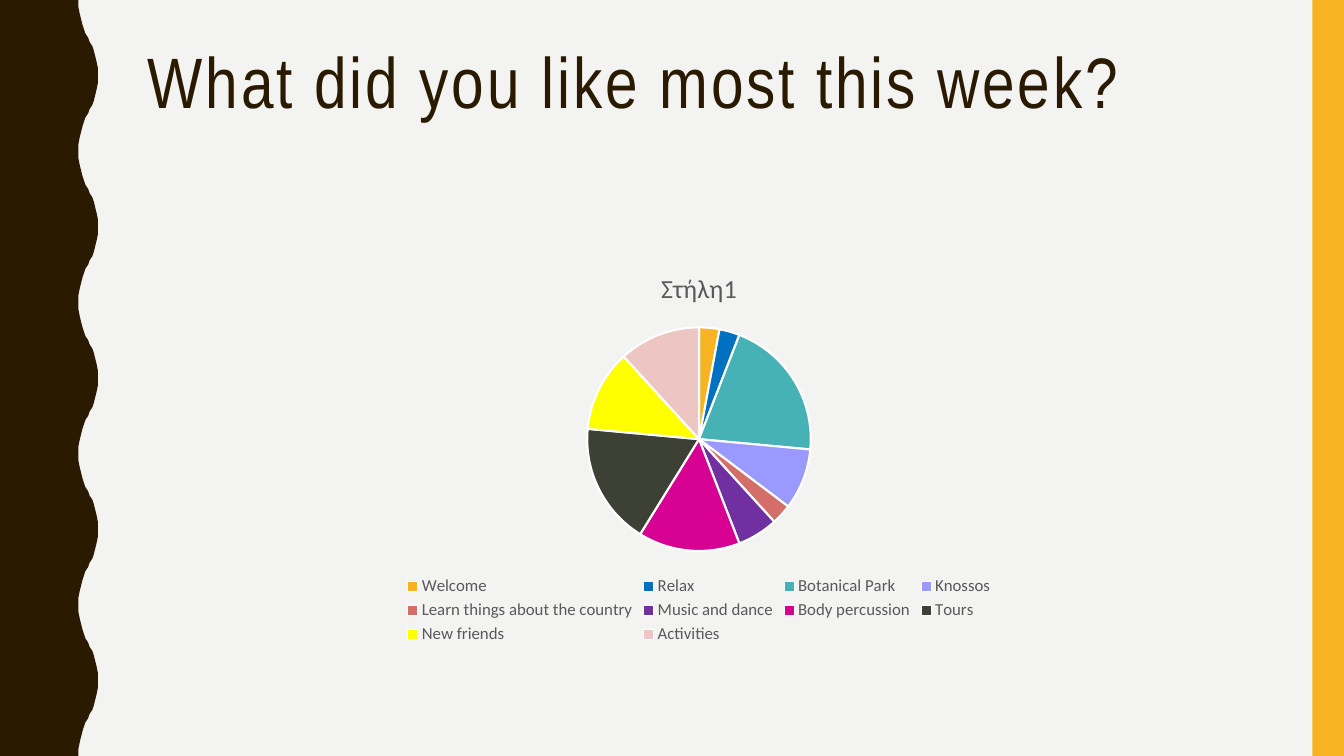
from pptx import Presentation
from pptx.chart import data
from pptx.dml import color
from pptx.enum import chart as charts, shapes, text
from pptx.util import Pt

TITLE = "What did you like most this week?"
CHART_TITLE = "Στήλη1"
ACTIVITIES = [
    ("Welcome", 3, "F8B323"),
    ("Relax", 3, "0070C0"),
    ("Botanical Park", 21, "46B2B5"),
    ("Knossos", 9, "9999FF"),
    ("Learn things about the country", 3, "D36F68"),
    ("Music and dance", 6, "7030A0"),
    ("Body percussion", 15, "D60093"),
    ("Tours", 18, "3D4035"),
    ("New friends", 12, "FFFF00"),
    ("Activities", 12, "EDC5C3"),
]
COLORS = {
    "background": "F3F3F2",
    "wave": "2A1A00",
    "stripe": "F8B323",
    "label": "595959",
    "border": "FFFFFF",
}
WIDTH, HEIGHT = 960, 540
CONTENT_LEFT, CONTENT_WIDTH = 98.64, 801.36
WAVE_PERIOD = 108
WAVE_RISE = [
    (56.16, 0), (56.3, 5), (56.9, 10), (57.7, 14.4), (58.6, 18),
    (59.8, 21), (61.2, 24), (62.7, 27), (64.2, 30), (65.6, 33),
    (66.9, 36), (68.2, 39.6), (69.2, 44), (69.8, 49), (70, 54),
]


def rgb(value):
    return color.RGBColor.from_string(value)


def set_values(target, values):
    for name, value in values.items():
        setattr(target, name, value)


def paint(shape, value):
    shape.fill.solid()
    shape.fill.fore_color.rgb = rgb(value)
    shape.line.fill.background()
    shape.shadow.inherit = False


def style_font(font, size, value, name):
    set_values(font, {"size": Pt(size), "name": name, "bold": False})
    font.color.rgb = rgb(value)


def add_wave(slide):
    fall = [(x, WAVE_PERIOD - y) for x, y in reversed(WAVE_RISE[:-1])]
    edge = [
        (x, y + start)
        for start in range(0, HEIGHT, WAVE_PERIOD)
        for x, y in WAVE_RISE + fall
    ]
    builder = slide.shapes.build_freeform(0, 0, scale=Pt(1))
    builder.add_line_segments(edge + [(0, HEIGHT)], close=True)
    paint(builder.convert_to_shape(), COLORS["wave"])


def add_title(slide):
    box = slide.shapes.add_textbox(
        Pt(CONTENT_LEFT), Pt(30.24), Pt(CONTENT_WIDTH), Pt(117.36))
    set_values(box.text_frame, {
        "word_wrap": True, "vertical_anchor": text.MSO_ANCHOR.TOP})
    paragraph = box.text_frame.paragraphs[0]
    paragraph.line_spacing = 0.9
    run = paragraph.add_run()
    run.text = TITLE
    style_font(run.font, 51, COLORS["wave"], "Arial Narrow")
    run._r.get_or_add_rPr().set("spc", "200")


def add_pie(slide):
    chart_data = data.CategoryChartData()
    chart_data.categories = [name for name, _, _ in ACTIVITIES]
    chart_data.add_series(CHART_TITLE, [value for _, value, _ in ACTIVITIES])
    chart = slide.shapes.add_chart(
        charts.XL_CHART_TYPE.PIE, Pt(CONTENT_LEFT), Pt(180),
        Pt(CONTENT_WIDTH), Pt(282.96), chart_data).chart
    style_font(chart.font, 10, "000000", "Calibri")
    chart.has_title = True
    chart.chart_title.include_in_layout = False
    paragraph = chart.chart_title.text_frame.paragraphs[0]
    run = paragraph.add_run()
    run.text = CHART_TITLE
    style_font(run.font, 18.6, COLORS["label"], "Calibri")
    chart.has_legend = True
    set_values(chart.legend, {
        "position": charts.XL_LEGEND_POSITION.BOTTOM,
        "include_in_layout": False})
    style_font(chart.legend.font, 12, COLORS["label"], "Calibri")
    plot = chart.plots[0]
    plot.vary_by_categories = True
    for index, (_, _, value) in enumerate(ACTIVITIES):
        point = plot.series[0].points[index].format
        point.fill.solid()
        point.fill.fore_color.rgb = rgb(value)
        point.line.color.rgb = rgb(COLORS["border"])
        point.line.width = Pt(1.5)


def main():
    presentation = Presentation()
    set_values(presentation, {
        "slide_width": Pt(WIDTH), "slide_height": Pt(HEIGHT)})
    slide = presentation.slides.add_slide(presentation.slide_layouts[6])
    slide.background.fill.solid()
    slide.background.fill.fore_color.rgb = rgb(COLORS["background"])
    add_wave(slide)
    stripe = slide.shapes.add_shape(
        shapes.MSO_SHAPE.RECTANGLE, Pt(937.5), 0, Pt(22.5), Pt(HEIGHT))
    paint(stripe, COLORS["stripe"])
    add_title(slide)
    add_pie(slide)
    presentation.save("out.pptx")


if __name__ == "__main__":
    main()
